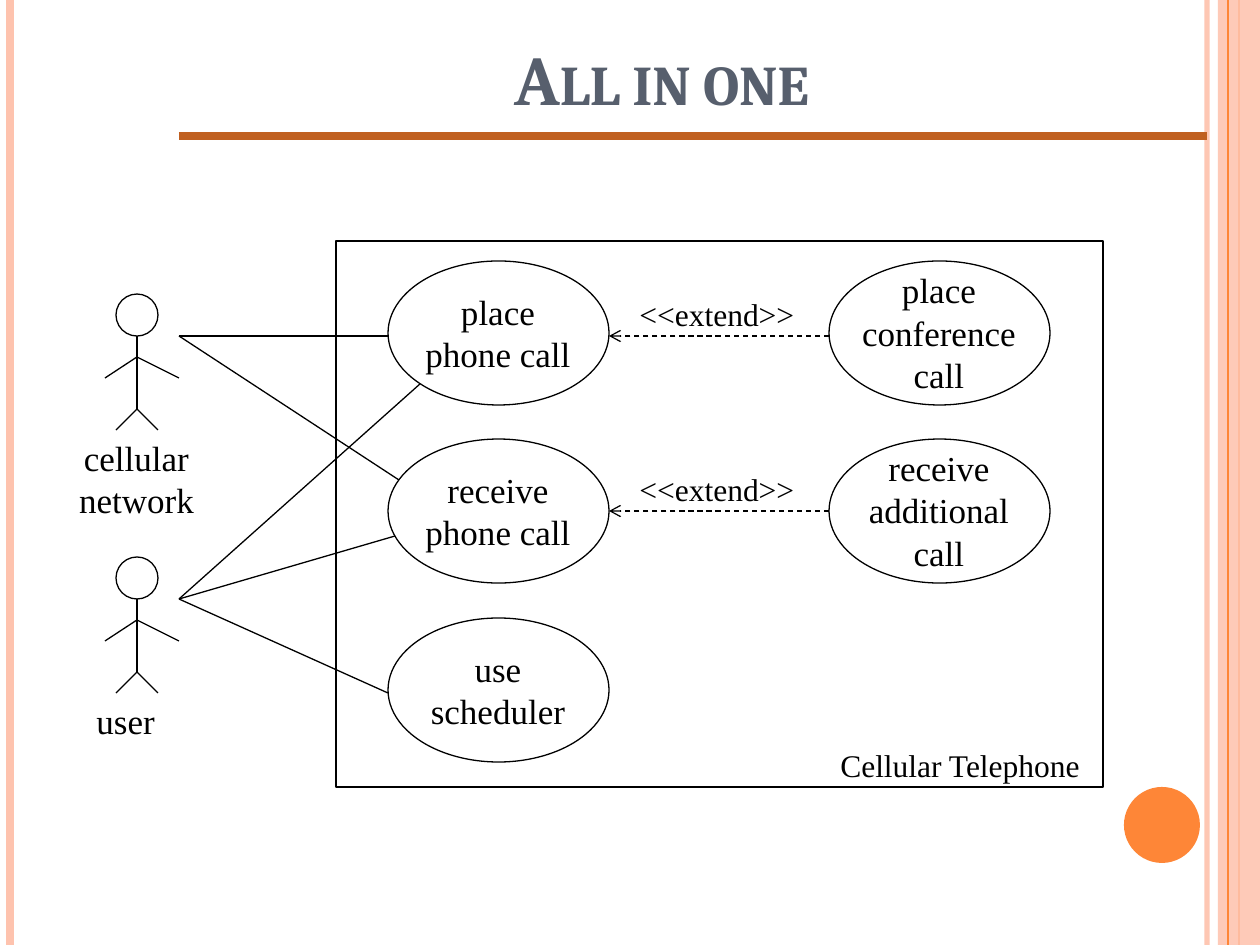
from lxml import etree
from pptx import Presentation
from pptx import util as u
from pptx.dml.color import RGBColor
from pptx.enum import dml, shapes, text
from pptx.oxml.ns import qn

PX = 914400 / 126


class Theme:
    ink = RGBColor.from_string("000000")
    title = RGBColor.from_string("575F6D")
    rule = RGBColor.from_string("C06021")
    accent = RGBColor.from_string("FE8637")
    blush = RGBColor.from_string("FEC3AE")
    heading_font, body_font = "Cambria", "Times New Roman"
    title_size, label_size, note_size = 40, 20, 18
    thin = 0.75


deck = Presentation()
deck.slide_width, deck.slide_height = u.Emu(round(1260 * PX)), u.Emu(round(945 * PX))
page = deck.slides.add_slide(deck.slide_layouts[6])


def add_line(start, end, color=Theme.ink, width=Theme.thin):
    ends = [u.Emu(round(v * PX)) for v in (*start, *end)]
    line = page.shapes.add_connector(shapes.MSO_CONNECTOR.STRAIGHT, *ends)
    line.line.color.rgb = color
    line.line.width = u.Pt(width)
    etree.SubElement(line._element.spPr, qn("a:effectLst"))
    return line


def add_box(frame, kind=None, fill=None, words=None, size=Theme.label_size,
            align=text.PP_ALIGN.CENTER, wrap=True):
    """Add a text box when words are given, otherwise a filled or outlined shape."""
    frame = [u.Emu(round(v * PX)) for v in frame]
    if words is None:
        box = page.shapes.add_shape(kind, *frame)
        box.shadow.inherit = False
        if fill is None:
            box.fill.background()
            box.line.color.rgb = Theme.ink
            box.line.width = u.Pt(Theme.thin)
        else:
            box.fill.solid()
            box.fill.fore_color.rgb = fill
            box.line.fill.background()
        return box
    box = page.shapes.add_textbox(*frame)
    box.text_frame.word_wrap = wrap
    box.text_frame.vertical_anchor = text.MSO_ANCHOR.MIDDLE
    box.text_frame.text = words
    for para in box.text_frame.paragraphs:
        para.alignment = align
        for span in para.runs:
            span.font.name = Theme.body_font
            span.font.size = u.Pt(size)
            span.font.color.rgb = Theme.ink
    return box


OVAL, RECT = shapes.MSO_SHAPE.OVAL, shapes.MSO_SHAPE.RECTANGLE
LEFT = text.PP_ALIGN.LEFT

# Side stripes and corner disc
inner_stripe = add_line((1207, 0), (1207, 945), Theme.blush, 3)
add_line((10, 0), (10, 945), Theme.blush, 4.5)
add_line((1239, 0), (1239, 945), Theme.accent, 1.5)
band = add_box((1218, 0, 42, 945), RECT, Theme.blush)
add_line((1228, 0), (1228, 945), Theme.accent)
add_box((1124, 787, 76, 76), OVAL, Theme.accent)
for stripe, opacity in ((inner_stripe, 93), (band, 87)):
    color = next(stripe._element.spPr.iter(qn("a:srgbClr")))
    etree.SubElement(color, qn("a:alpha"), val=str(opacity * 1000))

# Title
add_line((179, 136), (1207, 136), Theme.rule, 4.5)
title = add_box((84, 29, 1155, 97), words="All in one", size=Theme.title_size)
title.text_frame.vertical_anchor = text.MSO_ANCHOR.BOTTOM
title_span = title.text_frame.paragraphs[0].runs[0]
title_span.font.name = Theme.heading_font
title_span.font.bold = True
title_span.font.color.rgb = Theme.title
title_span._r.get_or_add_rPr().set("cap", "small")

# Actors, with each label starting below the feet
for top in (294, 557):
    add_box((116, top, 42, 42), OVAL)
    neck, shoulder, hip = top + 42, top + 63, top + 115
    add_line((137, neck), (137, hip))
    for hand in (179, 105):
        add_line((137, shoulder), (hand, shoulder + 21))
    for foot in (158, 116):
        add_line((137, hip), (foot, hip + 21))
add_box((63, 430, 147, 97), words="cellular\nnetwork")
add_box((84, 693, 107, 54), words="user", align=LEFT)

# Use cases on a grid of two columns and three rows, tall enough for three lines
columns, row_centers = (388, 829), (333, 511, 690)
oval_width, oval_height = 221, 144
use_cases = (
    (0, 0, "place\nphone call", 97),
    (0, 1, "receive\nphone call", 97),
    (1, 0, "place\nconference call", 139),
    (1, 1, "receive\nadditional call", 139),
    (0, 2, "use\nscheduler", 97),
)
for column, row, words, height in use_cases:
    left, center = columns[column], row_centers[row]
    add_box((left, center - oval_height / 2, oval_width, oval_height), OVAL)
    add_box((left + 9, center - 1 - height / 2, 202, height), words=words)

# Associations from each actor
network, user = (179, 336), (179, 599)
for actor, target in (
    (network, (388, 336)), (network, (399, 480)),
    (user, (420, 384)), (user, (395, 536)), (user, (388, 693)),
):
    add_line(actor, target)

# Extend relations
for y in (336, 511):
    relation = add_line((829, y), (609, y))
    relation.line.dash_style = dml.MSO_LINE.DASH
    etree.SubElement(relation.line._get_or_add_ln(), qn("a:tailEnd"), type="arrow")
    add_box((627, y - 47, 180, 50), words="<<extend>>", size=Theme.note_size,
            align=LEFT, wrap=False)

# System boundary
add_box((336, 241, 767, 546), RECT)
add_box((828, 740, 267, 50), words="Cellular Telephone", size=Theme.note_size,
        align=LEFT, wrap=False)

deck.save("out.pptx")
